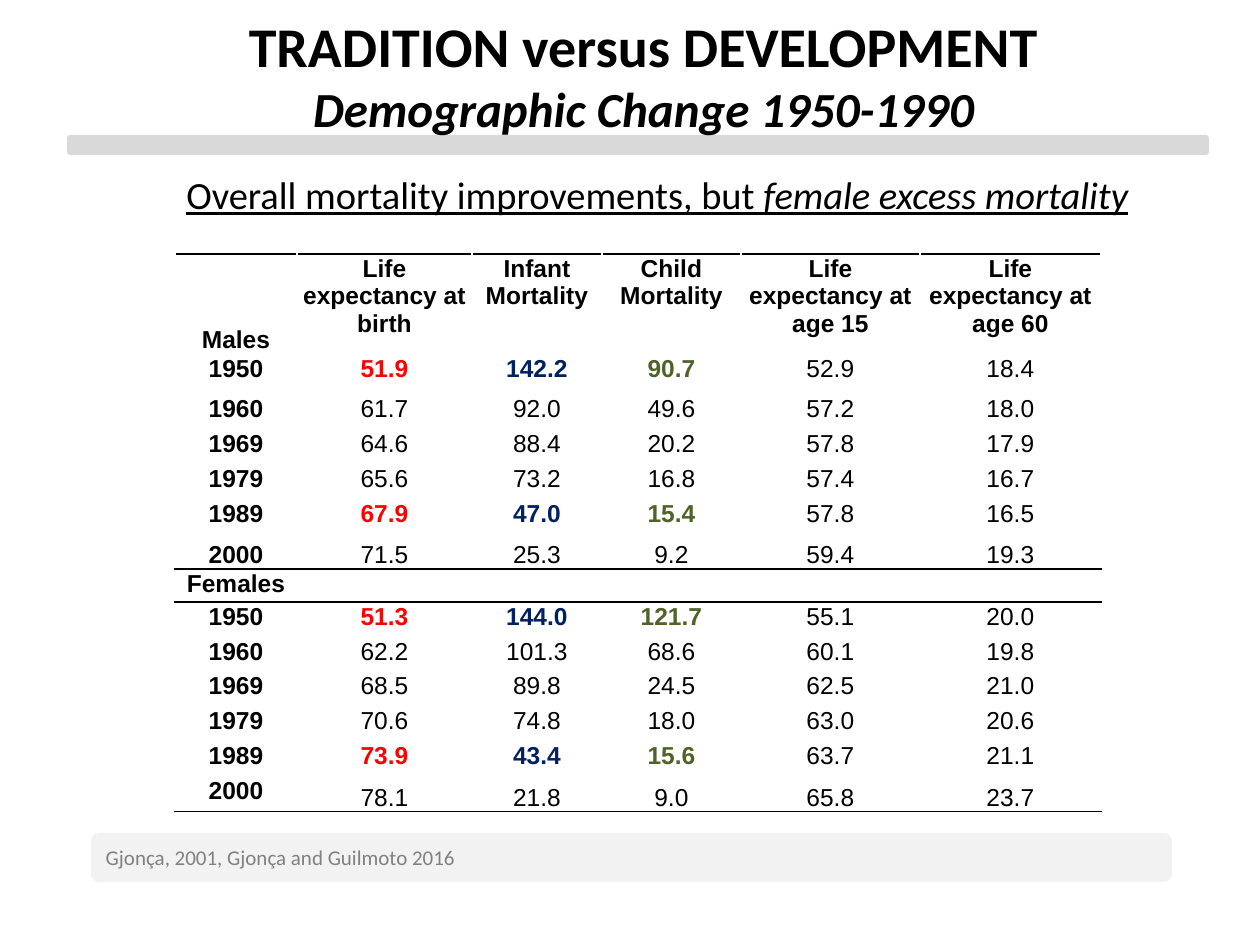
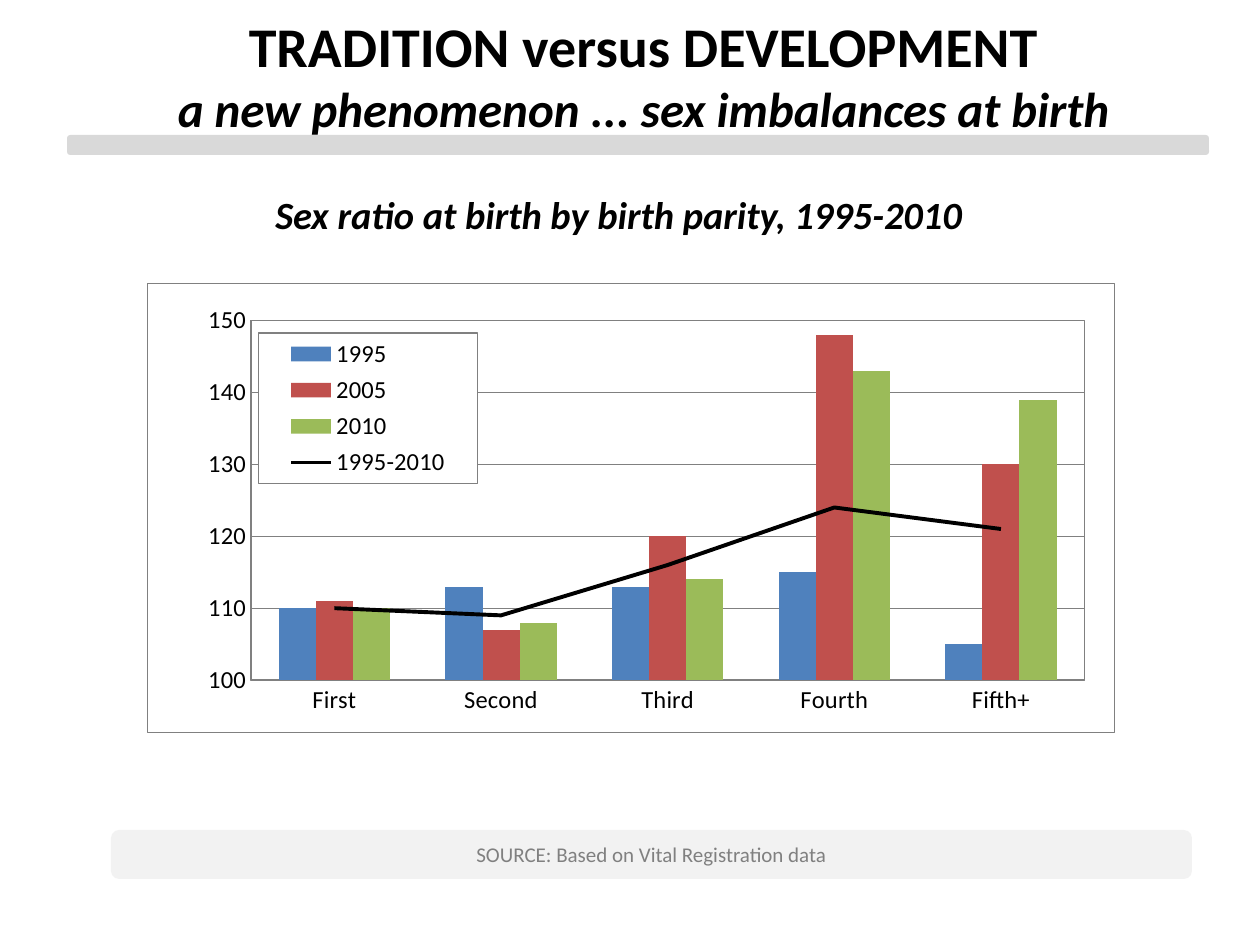
from dataclasses import dataclass
from typing import Any

from lxml import etree
from pptx import Presentation
from pptx.chart.data import CategoryChartData
from pptx.dml.color import RGBColor
from pptx.enum.chart import XL_CHART_TYPE, XL_LEGEND_POSITION, XL_MARKER_STYLE, XL_TICK_MARK
from pptx.enum.shapes import MSO_SHAPE
from pptx.enum.text import MSO_ANCHOR, MSO_AUTO_SIZE, PP_ALIGN
from pptx.oxml.ns import qn
from pptx.util import Emu, Pt

COLUMNS = XL_CHART_TYPE.COLUMN_CLUSTERED
LEGEND_RIGHT = XL_LEGEND_POSITION.RIGHT
NO_MARKER = XL_MARKER_STYLE.NONE
NO_TICK = XL_TICK_MARK.NONE
ROUNDED = MSO_SHAPE.ROUNDED_RECTANGLE
TOP, MIDDLE, BOTTOM = MSO_ANCHOR.TOP, MSO_ANCHOR.MIDDLE, MSO_ANCHOR.BOTTOM
GROW = MSO_AUTO_SIZE.SHAPE_TO_FIT_TEXT
LEFT, CENTER = PP_ALIGN.LEFT, PP_ALIGN.CENTER

PX_PER_INCH = 126


@dataclass(frozen=True)
class Theme:
    ink: str = "000000"
    band: str = "D9D9D9"
    footer: str = "F2F2F2"
    muted: str = "808080"
    life: str = "FF0000"
    infant: str = "002060"
    child: str = "4F6228"
    bars: tuple[str, ...] = ("4F81BD", "C0504D", "9BBB59")
    body_font: str = "Calibri"
    table_font: str = "Arial"
    title: int = 32
    subtitle: int = 28
    caption: int = 22
    data: int = 14
    source: int = 12
    rule: float = 1
    frame: float = 0.75
    trend: float = 2.25


THEME = Theme()


@dataclass(frozen=True)
class Box:
    """A rectangle in px."""
    left: int
    top: int
    width: int
    height: int

    def emu(self) -> tuple[Emu, Emu, Emu, Emu]:
        return px(self.left), px(self.top), px(self.width), px(self.height)


@dataclass(frozen=True)
class Layout:
    """A rectangle in fractions of the chart's size."""
    x: float
    y: float
    w: float
    h: float


@dataclass(frozen=True)
class Group:
    """One sex in the mortality table: its name and the figures by year."""
    name: str
    figures: tuple[str, ...]


TITLE_BOX = Box(111, 5, 1065, 140)
BAND_BOX = Box(67, 135, 1142, 20)
TABLE_BOX = Box(175, 254, 926, 558)
CHART_BOX = Box(147, 283, 968, 450)
PLOT_LAYOUT = Layout(0.107, 0.082, 0.862, 0.802)
LEGEND_LAYOUT = Layout(0.115, 0.11, 0.226, 0.336)

COLUMN_WIDTHS = (122, 175, 130, 139, 179, 181)
ROW_HEIGHTS = (100, 40, *[35] * 5, 33, *[35] * 6)
MEASURES = ("Life expectancy at birth", "Infant Mortality", "Child Mortality",
            "Life expectancy at age 15", "Life expectancy at age 60")
MALES = Group("Males", (
    "1950 51.9 142.2 90.7 52.9 18.4",
    "1960 61.7 92.0 49.6 57.2 18.0",
    "1969 64.6 88.4 20.2 57.8 17.9",
    "1979 65.6 73.2 16.8 57.4 16.7",
    "1989 67.9 47.0 15.4 57.8 16.5",
    "2000 71.5 25.3 9.2 59.4 19.3"))
FEMALES = Group("Females", (
    "1950 51.3 144.0 121.7 55.1 20.0",
    "1960 62.2 101.3 68.6 60.1 19.8",
    "1969 68.5 89.8 24.5 62.5 21.0",
    "1979 70.6 74.8 18.0 63.0 20.6",
    "1989 73.9 43.4 15.6 63.7 21.1",
    "2000 78.1 21.8 9.0 65.8 23.7"))
COMPARED_YEARS = ("1950", "1989")
COMPARED_COLORS = {1: THEME.life, 2: THEME.infant, 3: THEME.child}

PARITIES = ("First", "Second", "Third", "Fourth", "Fifth+")
SEX_RATIOS = {
    "1995": (110, 113, 113, 115, 105),
    "2005": (111, 107, 120, 148, 130),
    "2010": (110, 108, 114, 143, 139),
    "1995-2010": (110, 109, 116, 124, 121),
}


def px(length: int) -> Emu:
    return Emu(round(length * 914400 / PX_PER_INCH))


def rgb(color: str) -> RGBColor:
    return RGBColor.from_string(color)


def write(paragraph: Any, text: str, *, size: int, color: str = THEME.ink,
          font: str = THEME.body_font, bold: bool = False, italic: bool = False,
          underline: bool = False, align: PP_ALIGN = LEFT) -> None:
    """Add one formatted run to a paragraph."""
    paragraph.alignment = align
    run = paragraph.add_run()
    run.text = text
    run.font.size, run.font.name = Pt(size), font
    run.font.bold, run.font.italic, run.font.underline = bold, italic, underline
    run.font.color.rgb = rgb(color)


def add_text_frame(slide: Any, box: Box, wrap: bool) -> Any:
    frame = slide.shapes.add_textbox(*box.emu()).text_frame
    frame.word_wrap = wrap
    frame.auto_size = GROW
    return frame


def add_bar(slide: Any, box: Box, color: str) -> Any:
    bar = slide.shapes.add_shape(ROUNDED, *box.emu())
    bar.shadow.inherit = False
    bar.fill.solid()
    bar.fill.fore_color.rgb = rgb(color)
    bar.line.fill.background()
    return bar


def add_heading(slide: Any, subtitle: str) -> None:
    """Draw the grey band and the two-line title above it."""
    add_bar(slide, BAND_BOX, THEME.band)
    frame = add_text_frame(slide, TITLE_BOX, wrap=True)
    write(frame.paragraphs[0], "TRADITION versus DEVELOPMENT",
          size=THEME.title, bold=True, align=CENTER)
    write(frame.add_paragraph(), subtitle, size=THEME.subtitle,
          bold=True, italic=True, align=CENTER)


def add_source(slide: Any, left: int, top: int, text: str, align: PP_ALIGN) -> None:
    frame = add_bar(slide, Box(left, top, 1081, 49), THEME.footer).text_frame
    frame.word_wrap = True
    frame.vertical_anchor = MIDDLE
    write(frame.paragraphs[0], text, size=THEME.source, color=THEME.muted, align=align)


def add_line_fill(line: Any, color: str) -> None:
    fill = etree.SubElement(line, qn("a:solidFill"))
    etree.SubElement(fill, qn("a:srgbClr"), val=color)


def rule_cell(cell: Any, side: str) -> None:
    """Draw a border on the side lnT or lnB; call before setting the fill."""
    properties = cell._tc.get_or_add_tcPr()
    line = etree.SubElement(properties, qn(f"a:{side}"), w=str(Pt(THEME.rule)))
    add_line_fill(line, THEME.ink)


def mortality_rows() -> list[list[str]]:
    return [
        [MALES.name, *MEASURES],
        *[figures.split() for figures in MALES.figures],
        [FEMALES.name, *[""] * len(MEASURES)],
        *[figures.split() for figures in FEMALES.figures],
    ]


def add_mortality_table(slide: Any) -> None:
    rows = mortality_rows()
    females_row, last_row = 1 + len(MALES.figures), len(rows) - 1
    table = slide.shapes.add_table(len(rows), len(COLUMN_WIDTHS), *TABLE_BOX.emu()).table
    table.first_row = table.horz_banding = False
    for column, width in zip(table.columns, COLUMN_WIDTHS):
        column.width = px(width)
    for row, height in zip(table.rows, ROW_HEIGHTS):
        row.height = px(height)

    bottom_cells = {(0, 0)} | {(females_row - 1, c) for c in range(len(COLUMN_WIDTHS))}
    bottom_cells |= {(last_row, c) for c in range(1, len(COLUMN_WIDTHS))}
    for r, values in enumerate(rows):
        for c, value in enumerate(values):
            cell = table.cell(r, c)
            cell.margin_left = cell.margin_right = cell.margin_top = px(1)
            cell.margin_bottom = 0
            cell.vertical_anchor = BOTTOM if (r, c) in bottom_cells else TOP
            if r in (0, females_row, females_row + 1):
                rule_cell(cell, "lnT")
            if r in (females_row - 1, females_row, last_row):
                rule_cell(cell, "lnB")
            cell.fill.background()
            paragraph = cell.text_frame.paragraphs[0]
            if not value:
                etree.SubElement(paragraph._p, qn("a:endParaRPr"), sz=str(THEME.data * 100))
                continue
            compared = values[0] in COMPARED_YEARS and c in COMPARED_COLORS
            write(paragraph, value, size=THEME.data, font=THEME.table_font, align=CENTER,
                  bold=r == 0 or c == 0 or compared,
                  color=COMPARED_COLORS[c] if compared else THEME.ink)


def place(part: Any, layout: Layout, index: int, inner: bool = False) -> None:
    """Give a chart part a fixed place; index is where its layout element belongs."""
    for old in part.findall(qn("c:layout")):
        part.remove(old)
    element = etree.SubElement(part, qn("c:layout"))
    manual = etree.SubElement(element, qn("c:manualLayout"))
    settings = {"layoutTarget": "inner"} if inner else {}
    settings |= {"xMode": "edge", "yMode": "edge"}
    settings |= {key: str(getattr(layout, key)) for key in "xywh"}
    for tag, value in settings.items():
        etree.SubElement(manual, qn(f"c:{tag}"), val=value)
    part.insert(index, element)


def add_frame(part: Any, fill: str | None = None) -> None:
    """Outline a chart part in grey, with an optional fill."""
    properties = etree.SubElement(part, qn("c:spPr"))
    if fill:
        add_line_fill(properties, fill)
    line = etree.SubElement(properties, qn("a:ln"), w=str(Pt(THEME.frame)))
    add_line_fill(line, THEME.muted)
    text_properties = part.find(qn("c:txPr"))
    if text_properties is not None:
        text_properties.addprevious(properties)


def move_last_series_to_line(chart: Any) -> None:
    bars = chart.plots[0]._element
    trend = bars.findall(qn("c:ser"))[-1]
    for invert in trend.findall(qn("c:invertIfNegative")):
        trend.remove(invert)
    lines = etree.SubElement(bars.getparent(), qn("c:lineChart"))
    bars.addnext(lines)
    etree.SubElement(lines, qn("c:grouping"), val="standard")
    etree.SubElement(lines, qn("c:varyColors"), val="0")
    lines.append(trend)
    etree.SubElement(lines, qn("c:marker"), val="1")
    for axis in bars.findall(qn("c:axId")):
        etree.SubElement(lines, qn("c:axId"), val=axis.get("val"))


def add_sex_ratio_chart(slide: Any) -> None:
    data = CategoryChartData(number_format="0")
    data.categories = PARITIES
    for name, ratios in SEX_RATIOS.items():
        data.add_series(name, ratios)
    chart = slide.shapes.add_chart(COLUMNS, *CHART_BOX.emu(), data).chart
    chart.has_title = False
    chart.font.size, chart.font.name = Pt(THEME.data), THEME.body_font
    chart.font.color.rgb = rgb(THEME.ink)

    move_last_series_to_line(chart)
    bars, lines = chart.plots
    bars.gap_width, bars.overlap, bars.vary_by_categories = 150, 0, False
    for series, color in zip(bars.series, THEME.bars):
        series.format.fill.solid()
        series.format.fill.fore_color.rgb = rgb(color)
    trend = lines.series[0]
    trend.smooth = False
    trend.marker.style = NO_MARKER
    trend.format.line.width = Pt(THEME.trend)
    trend.format.line.color.rgb = rgb(THEME.ink)

    ratio_axis = chart.value_axis
    ratio_axis.minimum_scale, ratio_axis.maximum_scale, ratio_axis.major_unit = 100, 150, 10
    ratio_axis.tick_labels.number_format = "0"
    ratio_axis.tick_labels.number_format_is_linked = False
    ratio_axis.has_major_gridlines = True
    for axis in (chart.category_axis, ratio_axis):
        axis.major_tick_mark = axis.minor_tick_mark = NO_TICK
    for styled in (chart.category_axis, ratio_axis, ratio_axis.major_gridlines):
        styled.format.line.width = Pt(THEME.frame)
        styled.format.line.color.rgb = rgb(THEME.muted)

    chart.has_legend = True
    chart.legend.position = LEGEND_RIGHT
    chart.legend.include_in_layout = True
    chart.legend.font.size = Pt(THEME.data)
    plot_area, legend = bars._element.getparent(), chart.legend._element
    place(plot_area, PLOT_LAYOUT, 0, inner=True)
    place(legend, LEGEND_LAYOUT, 1)
    add_frame(plot_area)
    add_frame(legend, "FFFFFF")
    add_frame(chart._chartSpace, "FFFFFF")


def build_mortality_slide(slide: Any) -> None:
    add_heading(slide, "Demographic Change 1950-1990")
    add_source(slide, 91, 833, "Gjonça, 2001, Gjonça and Guilmoto 2016", LEFT)
    add_mortality_table(slide)
    caption = add_text_frame(slide, Box(174, 165, 980, 59), wrap=False).paragraphs[0]
    write(caption, "Overall mortality improvements, but ", size=THEME.caption, underline=True)
    write(caption, "female excess mortality", size=THEME.caption, underline=True, italic=True)


def build_sex_ratio_slide(slide: Any) -> None:
    add_heading(slide, "a new phenomenon ... sex imbalances at birth")
    add_sex_ratio_chart(slide)
    caption = add_text_frame(slide, Box(263, 185, 718, 59), wrap=False).paragraphs[0]
    write(caption, "Sex ratio at birth by birth parity, 1995-2010",
          size=THEME.caption, bold=True, italic=True)
    add_source(slide, 111, 830, "SOURCE: Based on Vital Registration data", CENTER)


def main() -> None:
    deck = Presentation()
    deck.slide_width, deck.slide_height = px(1260), px(945)
    blank = deck.slide_layouts[6]
    for build in (build_mortality_slide, build_sex_ratio_slide):
        build(deck.slides.add_slide(blank))
    deck.save("out.pptx")


if __name__ == "__main__":
    main()
